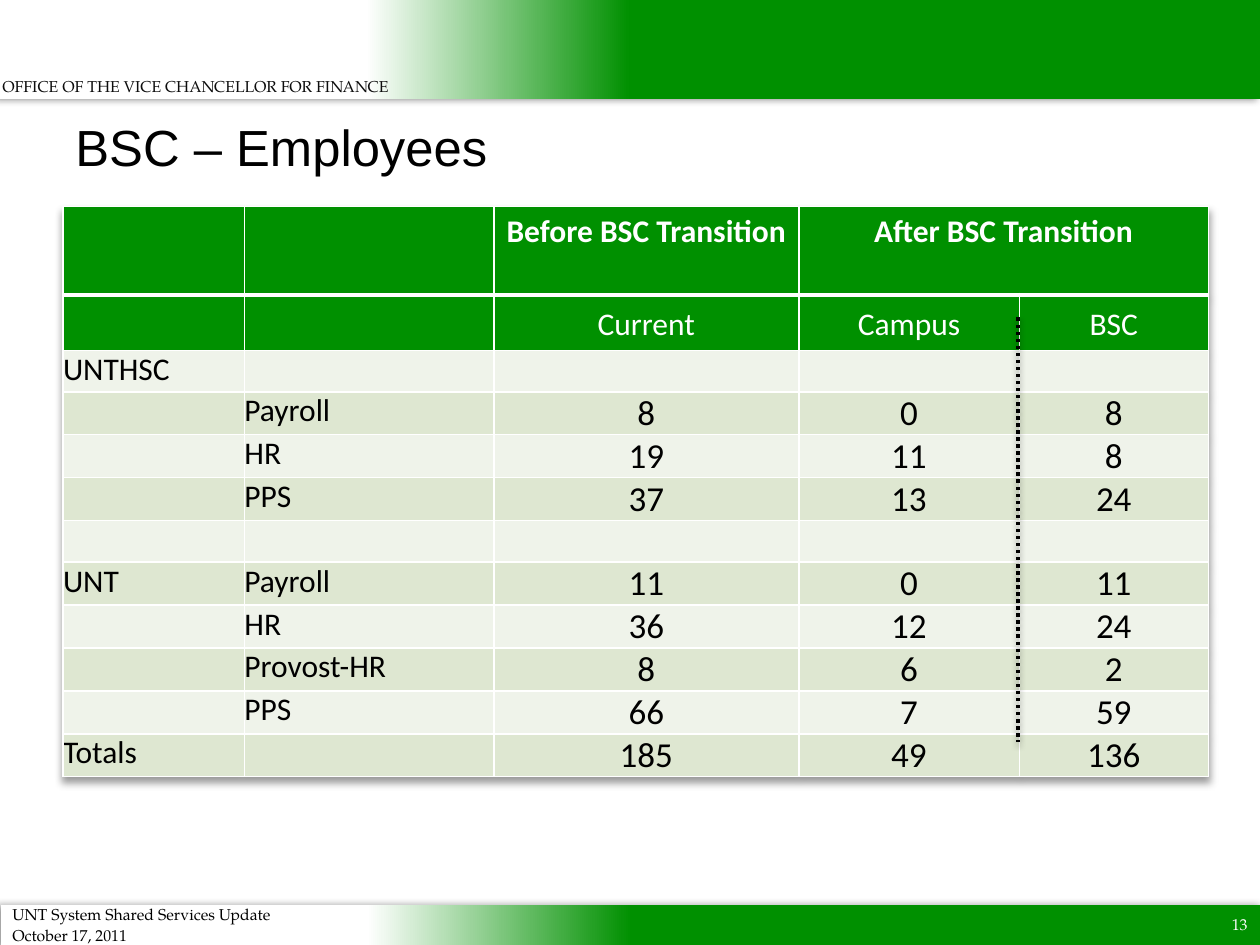
from lxml.etree import SubElement
from pptx import Presentation
from pptx.dml.color import RGBColor
from pptx.enum.dml import MSO_LINE
from pptx.enum.shapes import MSO_CONNECTOR, MSO_SHAPE
from pptx.enum.text import MSO_ANCHOR as Anchor, PP_ALIGN as Align
from pptx.oxml.ns import qn
from pptx.util import Inches, Pt

GREEN, WHITE, BLACK = "009000", "FFFFFF", "000000"
BANDS = ("EFF3EA", "DEE7D1")
SERIF = "TeX Gyre Pagella"

BARS = [(0.01, 7.18, 10.01, 0.33), (0, -0.01, 10.01, 0.8)]
GRADIENT = [(0, WHITE), (29, WHITE), (50, GREEN)]
TEXTS = [
    ("OFFICE OF THE VICE CHANCELLOR FOR FINANCE", (-0.08, 0.56, 4.99, 0.25),
     SERIF, 9, "0D0D0D", Align.LEFT, Anchor.TOP, 0.05),
    ("BSC – Employees", (0.5, 0.84, 9, 0.61),
     "Arial", 29, BLACK, Align.LEFT, Anchor.BOTTOM, 0.05),
    ("13", (9.58, 7.17, 0.42, 0.33),
     SERIF, 9, WHITE, Align.RIGHT, Anchor.MIDDLE, 0.05),
    ("October 17, 2011", (0, 7.34, 3.16, 0.17),
     SERIF, 9, BLACK, Align.LEFT, Anchor.MIDDLE, 0),
    ("UNT System Shared Services Update", (0, 7.18, 3.17, 0.16),
     SERIF, 9, BLACK, Align.LEFT, Anchor.MIDDLE, 0),
]
COLUMN_WIDTHS = [1.44, 1.98, 2.42, 1.75, 1.5]
HEADER_HEIGHTS = [0.7, 0.44]
BODY_HEIGHT = 0.33
ROWS = [
    ("", "", "Before BSC Transition", "After BSC Transition", ""),
    ("", "", "Current", "Campus", "BSC"),
    ("UNTHSC", "", "", "", ""),
    ("", "Payroll", "8", "0", "8"),
    ("", "HR", "19", "11", "8"),
    ("", "PPS", "37", "13", "24"),
    ("", "", "", "", ""),
    ("UNT", "Payroll", "11", "0", "11"),
    ("", "HR", "36", "12", "24"),
    ("", "Provost-HR", "8", "6", "2"),
    ("", "PPS", "66", "7", "59"),
    ("Totals", "", "185", "49", "136"),
]


def rgb(color):
    return RGBColor.from_string(color)


def add_color(parent, color, alpha=None):
    element = SubElement(parent, qn("a:srgbClr"), val=color)
    if alpha is not None:
        SubElement(element, qn("a:alpha"), val=str(alpha * 1000))


def add_shadow(properties, alpha, blur, distance, angle):
    effects = SubElement(properties, qn("a:effectLst"))
    shadow = SubElement(effects, qn("a:outerShdw"), blurRad=str(Pt(blur)), dist=str(Pt(distance)),
                        dir=str(angle * 60000), algn="ctr", rotWithShape="0")
    add_color(shadow, BLACK, alpha)
    return effects


def write(frame, text, font_name, size, color, align, bold=False):
    paragraph = frame.paragraphs[0]
    paragraph.alignment = align
    paragraph.font.size = Pt(size)
    if text:
        run = paragraph.add_run()
        run.text = text
        font = run.font
        font.name, font.size, font.bold = font_name, Pt(size), bold
        font.color.rgb = rgb(color)


def add_bar(slide, box):
    bar = slide.shapes.add_shape(MSO_SHAPE.RECTANGLE, *map(Inches, box))
    bar.fill.gradient()
    bar.fill.gradient_angle = 0
    stops = bar.element.spPr.find(".//" + qn("a:gsLst"))
    for stop in list(stops):
        stops.remove(stop)
    for position, color in GRADIENT:
        add_color(SubElement(stops, qn("a:gs"), pos=str(position * 1000)), color)
    bar.line.fill.background()
    add_shadow(bar.element.spPr, 40, 4, 3, 180)


def add_text(slide, text, box, font_name, size, color, align, anchor, inset):
    frame = slide.shapes.add_textbox(*map(Inches, box)).text_frame
    frame.word_wrap = True
    frame.vertical_anchor = anchor
    frame.margin_top = frame.margin_bottom = Inches(inset)
    write(frame, text, font_name, size, color, align)


def set_borders(cell, bottom_width):
    properties = cell._tc.get_or_add_tcPr()
    widths = {"a:lnL": 1, "a:lnR": 1, "a:lnT": 1, "a:lnB": bottom_width}
    for index, (tag, width) in enumerate(widths.items()):
        line = SubElement(properties, qn(tag), w=str(Pt(width)))
        add_color(SubElement(line, qn("a:solidFill")), WHITE)
        properties.insert(index, line)


def fill_cell(cell, text, row, column):
    header = row < len(HEADER_HEIGHTS)
    cell.fill.solid()
    cell.fill.fore_color.rgb = rgb(GREEN if header else BANDS[row % 2])
    if header:
        size, color = 18, WHITE
        cell.vertical_anchor = Anchor.BOTTOM if row == 1 else Anchor.TOP
    else:
        size, color = (20 if column >= 2 and text else 18), BLACK
        cell.margin_left = cell.margin_right = cell.margin_top = cell.margin_bottom = 0
    align = Align.CENTER if column >= 2 else Align.LEFT
    write(cell.text_frame, text, "Calibri", size, color, align, bold=row == 0)
    set_borders(cell, 3 if row == 0 else 1)


def add_employee_table(slide):
    heights = HEADER_HEIGHTS + [BODY_HEIGHT] * (len(ROWS) - len(HEADER_HEIGHTS))
    box = (0.5, 1.64, sum(COLUMN_WIDTHS), sum(heights))
    table = slide.shapes.add_table(len(ROWS), len(COLUMN_WIDTHS), *map(Inches, box)).table
    table.first_row = table.horz_banding = False
    for column, width in zip(table.columns, COLUMN_WIDTHS):
        column.width = Inches(width)
    for row, height in zip(table.rows, heights):
        row.height = Inches(height)
    for row, texts in enumerate(ROWS):
        for column, text in enumerate(texts):
            fill_cell(table.cell(row, column), text, row, column)
    table.cell(0, 3).merge(table.cell(0, 4))
    properties = table._tbl.tblPr
    properties.insert(0, add_shadow(properties, 40, 4, 3, 90))


def add_divider(slide):
    ends = map(Inches, (8.08, 2.52, 8.08, 5.89))
    divider = slide.shapes.add_connector(MSO_CONNECTOR.STRAIGHT, *ends)
    divider.line.color.rgb = rgb(BLACK)
    divider.line.width = Pt(2)
    divider.line.dash_style = MSO_LINE.ROUND_DOT
    add_shadow(divider.element.spPr, 38, 3.1, 1.6, 90)


def main():
    presentation = Presentation()
    presentation.slide_width, presentation.slide_height = Inches(10), Inches(7.5)
    slide = presentation.slides.add_slide(presentation.slide_layouts[6])
    for box in BARS:
        add_bar(slide, box)
    add_employee_table(slide)
    for text in TEXTS:
        add_text(slide, *text)
    add_divider(slide)
    presentation.save("out.pptx")


if __name__ == "__main__":
    main()
